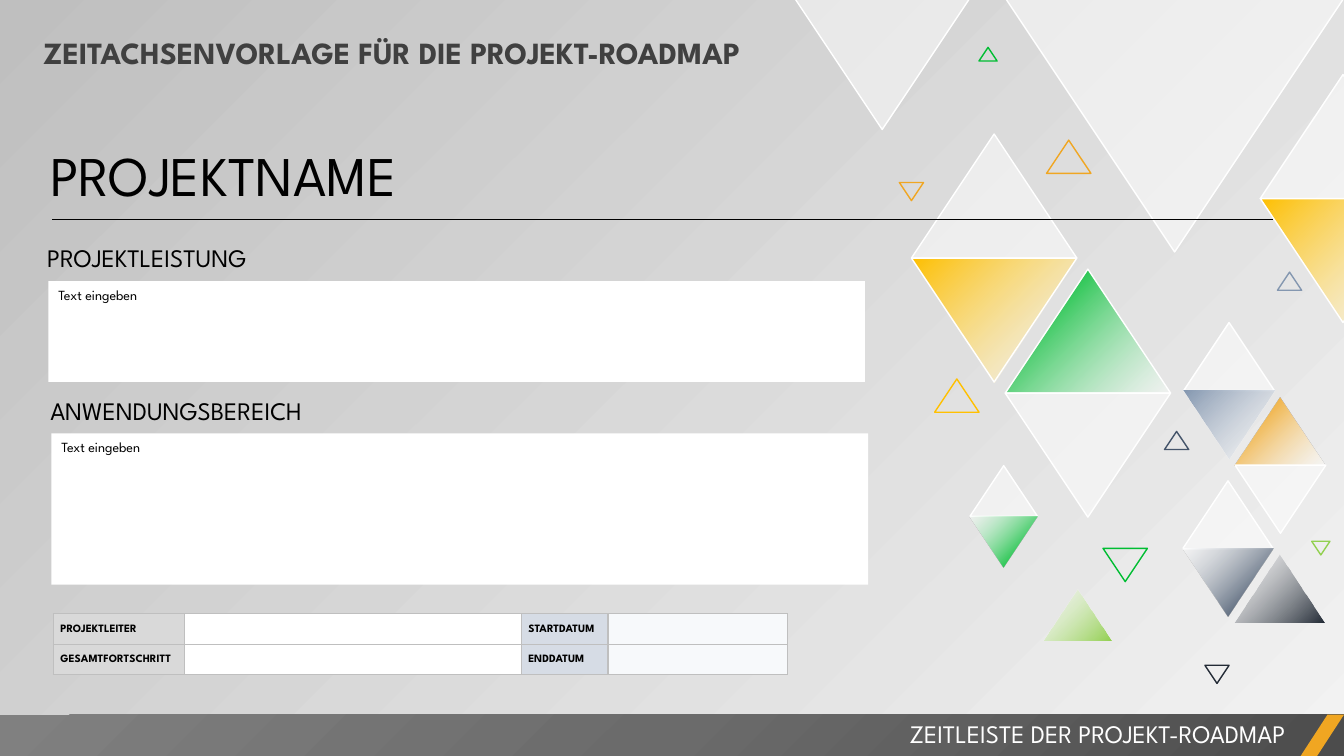
from lxml.etree import SubElement
from pptx import Presentation
from pptx.dml.color import RGBColor
from pptx.enum.shapes import MSO_CONNECTOR as Link, MSO_SHAPE as Form
from pptx.enum.text import MSO_ANCHOR as Anchor, MSO_AUTO_SIZE as Fit, PP_ALIGN as Align
from pptx.oxml import parse_xml
from pptx.oxml.ns import nsdecls, qn
from pptx.util import Inches, Pt

WIDE, HIGH = 13.33, 7.5
FONT = "League Spartan"
WHITE, BLACK, GREY = "FFFFFF", "000000", "BFBFBF"
GOLD, GREEN, AMBER, LIME = "FFC000", "00BD32", "F0A622", "92D050"
STEEL, SLATE, NIGHT = "8497B0", "44546A", "222A35"
SLOPE = '<a:lin ang="13500000" scaled="0"/>'
GLOW = '<a:path path="circle"><a:fillToRect l="100000" t="100000"/></a:path>'
PALE = [(0, WHITE, 50), (100, WHITE, 50)]


def color(code):
    return RGBColor.from_string(code)


def blend(owner, stops, shade=SLOPE):
    """Swap the solid fill of an element for a gradient of (place, colour, opacity)."""
    marks = "".join(
        f'<a:gs pos="{at * 1000}"><a:srgbClr val="{code}">'
        f'<a:alpha val="{alpha * 1000}"/></a:srgbClr></a:gs>'
        for at, code, alpha in stops)
    solid = owner.find(qn("a:solidFill"))
    owner.replace(solid, parse_xml(
        f'<a:gradFill {nsdecls("a")} rotWithShape="1">'
        f'<a:gsLst>{marks}</a:gsLst>{shade}</a:gradFill>'))


def fade(code):
    """Run from the colour to clear white."""
    return [(0, code, 100), (100, WHITE, 50)]


def rise(code):
    """Run from clear white to the colour."""
    return [(0, WHITE, 50), (82, code, 100)]


def write(frame, text, size=10, ink=BLACK, bold=False, align=Align.LEFT,
          anchor=Anchor.TOP, space=None):
    frame.word_wrap = True
    frame.vertical_anchor = anchor
    para = frame.paragraphs[0]
    para.alignment = align
    para.line_spacing = space
    run = para.add_run()
    run.text = text
    font = run.font
    font.name, font.size, font.bold = FONT, Pt(size), bold
    font.color.rgb = color(ink)


def place(slide, form, box, fill=None, edge=None):
    shape = slide.shapes.add_shape(form, *map(Inches, box))
    shape.shadow.inherit = False
    if fill:
        shape.fill.solid()
        shape.fill.fore_color.rgb = color(fill)
    else:
        shape.fill.background()
    if edge:
        shape.line.color.rgb = color(edge)
        shape.line.width = Pt(1)
    else:
        shape.line.fill.background()
    return shape


def label(slide, box, text, **style):
    note = slide.shapes.add_textbox(*map(Inches, box))
    write(note.text_frame, text, **style)


def peak(slide, left, top, wide, down=False, stops=None, edge=None):
    """Place a triangle three quarters as high as it is wide."""
    shape = place(slide, Form.ISOSCELES_TRIANGLE, (left, top, wide, wide * 0.75),
                  WHITE if stops else None, edge)
    if stops:
        blend(shape.element.spPr, stops)
    if down:
        shape.rotation = 180


def gem(slide, left, top, wide, upper, lower, rim):
    """Stack two triangles base to base; pale halves always have an edge."""
    for down, stops in enumerate((upper, lower)):
        edge = WHITE if rim or stops is PALE else None
        peak(slide, left, top + down * wide * 0.75, wide, bool(down), stops, edge)


def pattern(slide):
    for item in (
        (9.04, 1.33, 1.64, PALE, fade(GOLD), True),
        (9.97, 2.67, 1.64, rise(GREEN), PALE, True),
        (12.5, 0.74, 1.64, PALE, fade(GOLD), True),
        (11.73, 4.77, 0.9, PALE, rise(SLATE), False),
        (11.74, 3.2, 0.9, PALE, fade(STEEL), False),
        (12.25, 3.94, 0.9, rise(AMBER), PALE, False),
        (9.62, 4.62, 0.67, PALE, rise(GREEN), False),
    ):
        gem(slide, *item)
    for item in (
        (9.97, -0.02, 3.36, True, PALE, WHITE),
        (7.88, -0.02, 1.74, True, PALE, WHITE),
        (12.24, 5.5, 0.9, False, fade(NIGHT)),
        (10.35, 5.85, 0.67, False, fade(LIME)),
    ):
        peak(slide, *item)
    for left, top, wide, down, edge in (
        (10.94, 5.44, 0.44, True, GREEN),
        (9.27, 3.76, 0.44, False, GOLD),
        (10.38, 1.39, 0.44, False, AMBER),
        (11.55, 4.28, 0.24, False, SLATE),
        (11.95, 6.6, 0.24, True, NIGHT),
        (8.92, 1.81, 0.24, True, AMBER),
        (12.67, 2.7, 0.24, False, STEEL),
        (9.71, 0.47, 0.18, False, GREEN),
        (13.01, 5.37, 0.18, True, LIME),
    ):
        peak(slide, left, top, wide, down, edge=edge)


def heading(slide, box):
    title = slide.shapes.title
    title.left, title.top, title.width, title.height = map(Inches, box)
    title.text_frame.auto_size = Fit.NONE
    write(title.text_frame, "ZEITACHSENVORLAGE FÜR DIE PROJEKT-ROADMAP",
          size=22, ink="404040", bold=True)


def footer(slide, left, top, wide, high):
    bar = place(slide, Form.RECTANGLE, (left, top, wide, high), WHITE)
    blend(bar.element.spPr,
          [(0, "4C4C4C", 100), (50, "6B6B6B", 100), (100, "808080", 100)], GLOW)
    mark = place(slide, Form.PARALLELOGRAM,
                 (left + wide - 0.43, top, 0.43, high), AMBER)
    mark.adjustments[0] = 0.65
    label(slide, (left + wide - 8.08, top - 0.01, 7.6, 0.4),
          "ZEITLEISTE DER PROJEKT-ROADMAP", size=18, ink=WHITE, align=Align.RIGHT)


def project(slide, left, top, wide):
    label(slide, (left, top, wide, 0.77), "PROJEKTNAME", size=40)
    rule = slide.shapes.add_connector(
        Link.STRAIGHT, *map(Inches, (left + 0.12, top + 0.83,
                                     left + wide - 0.04, top + 0.83)))
    rule.line.color.rgb = color(BLACK)
    rule.line.width = Pt(0.5)
    SubElement(rule.element.spPr, qn("a:effectLst"))


def field(slide, left, top, high, name):
    label(slide, (left, top, 3.05, 0.4), name, size=18)
    panel = place(slide, Form.RECTANGLE, (left + 0.11, top + 0.43, 8.1, high), WHITE)
    write(panel.text_frame, "Text eingeben")


def border(cell):
    props = cell._tc.get_or_add_tcPr()
    for spot, side in enumerate("LRTB"):
        props.insert(spot, parse_xml(
            f'<a:ln{side} {nsdecls("a")} w="12700"><a:solidFill>'
            f'<a:srgbClr val="{GREY}"/></a:solidFill></a:ln{side}>'))


def facts(slide, box):
    rows = (("PROJEKTLEITER", "", "STARTDATUM", ""),
            ("GESAMTFORTSCHRITT", "", "ENDDATUM", ""))
    tints = ("D9D9D9", WHITE, "D6DCE5", "F7F9FB")
    table = slide.shapes.add_table(2, 4, *map(Inches, box)).table
    table.first_row = table.horz_banding = False
    for column, wide in zip(table.columns, (1.3, 3.34, 0.86, 1.78)):
        column.width = Inches(wide)
    for line, row in zip(rows, table.rows):
        row.height = Inches(box[3] / 2)
        for cell, text, tint in zip(row.cells, line, tints):
            cell.fill.solid()
            cell.fill.fore_color.rgb = color(tint)
            cell.margin_left = cell.margin_right = Inches(0.07)
            cell.margin_top = cell.margin_bottom = 0
            cell.vertical_anchor = Anchor.MIDDLE
            if text:
                write(cell.text_frame, text, size=8, bold=True,
                      anchor=Anchor.MIDDLE, space=1.07)
            else:
                para = cell.text_frame.paragraphs[0]._p
                SubElement(para, qn("a:endParaRPr"), sz="800")
            border(cell)


def main():
    deck = Presentation()
    deck.slide_width, deck.slide_height = Inches(WIDE), Inches(HIGH)
    slide = deck.slides.add_slide(deck.slide_layouts[5])
    slide.background.fill.solid()
    blend(slide.element.xpath(".//p:bgPr")[0], [(0, "F2F2F2", 40), (100, GREY, 100)])
    pattern(slide)
    heading(slide, (0.33, 0.28, 8.61, 0.47))
    footer(slide, 0, HIGH - 0.41, WIDE, 0.41)
    project(slide, 0.4, 1.35, 12.27)
    facts(slide, (0.53, 6.09, 7.28, 0.6))
    field(slide, 0.37, 2.36, 1, "PROJEKTLEISTUNG")
    field(slide, 0.4, 3.87, 1.5, "ANWENDUNGSBEREICH")
    deck.save("out.pptx")


if __name__ == "__main__":
    main()
